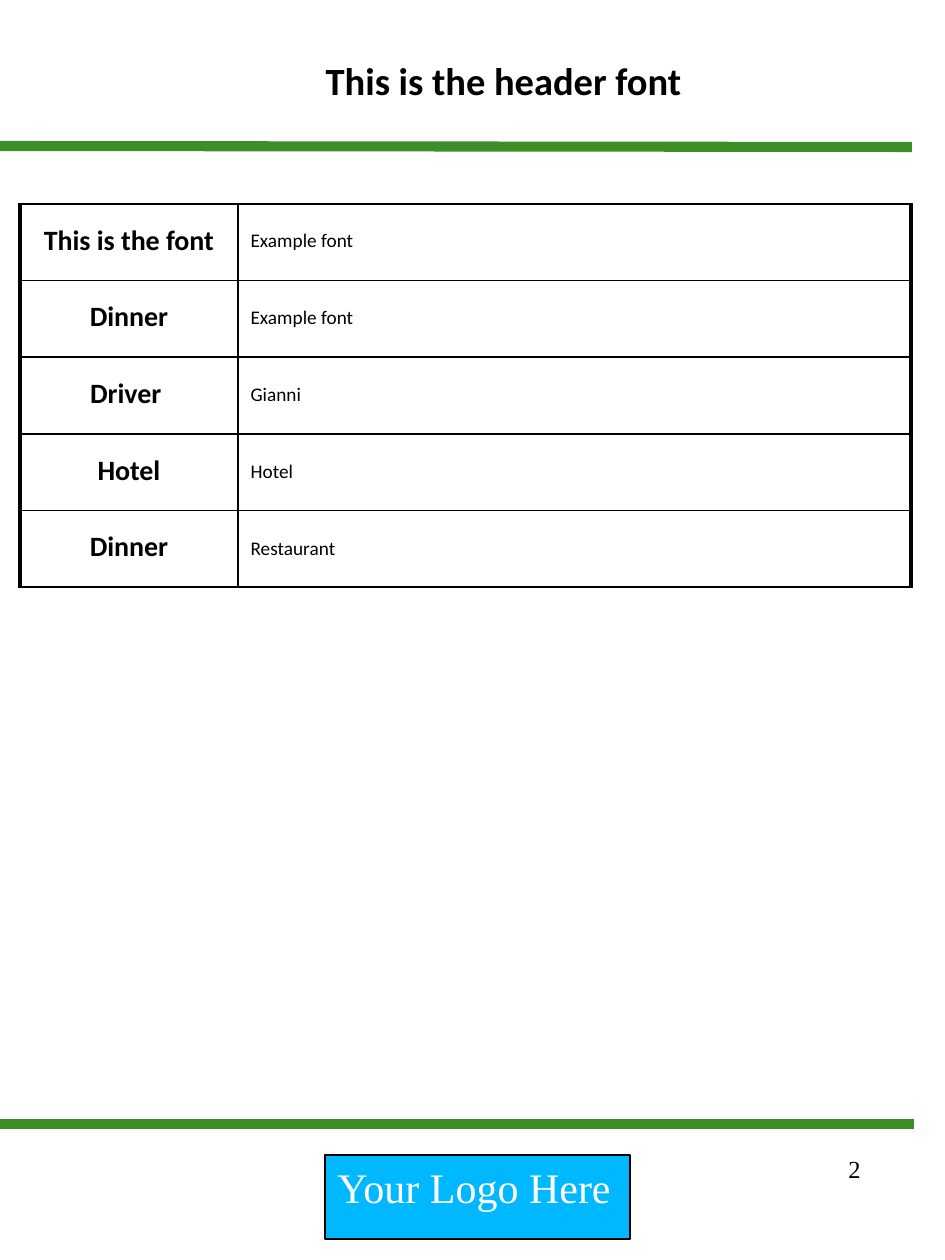
"""Build a one-page itinerary slide with a titled table and a logo box."""
import pptx
import pptx.dml.color
import pptx.enum.shapes
import pptx.enum.text
import pptx.oxml
import pptx.oxml.ns
import pptx.util

ALIGN = pptx.enum.text.PP_ALIGN
ANCHOR = pptx.enum.text.MSO_ANCHOR
EMU_PER_PX = 914400 / 126
BLACK, WHITE, GREEN, BLUE = "000000", "FFFFFF", "3C8E26", "00B8FF"
SANS, SERIF = "Calibri", "Times New Roman"

HEADER = "This is the header font"
ITINERARY = [
    ("This is the font", "Example font", True),
    ("Dinner", "Example font", True),
    ("Driver ", "Gianni", True),
    ("Hotel", "Hotel", False),
    ("Dinner", "Restaurant", False),
]
RULES = [(0, 1124, 914, 1124), (-1, 146, 912, 147)]
TABLE_BOX = (20, 204, 891, 383)
COLUMN_WIDTHS = (218, 673)


def px(length):
    return round(length * EMU_PER_PX)


def box(*lengths):
    return [px(length) for length in lengths]


def color(value):
    return pptx.dml.color.RGBColor.from_string(value)


def write(frame, text, size, font, ink=BLACK, bold=False, align=ALIGN.LEFT, anchor=ANCHOR.TOP):
    frame.word_wrap = True
    frame.vertical_anchor = anchor
    paragraph = frame.paragraphs[0]
    paragraph.alignment = align
    run = paragraph.add_run()
    run.text = text
    run.font.size = pptx.util.Pt(size)
    run.font.name = font
    run.font.bold = bold
    run.font.color.rgb = color(ink)
    return paragraph


def add_rule(slide, ends):
    rule = slide.shapes.add_connector(pptx.enum.shapes.MSO_CONNECTOR.STRAIGHT, *box(*ends))
    rule.line.color.rgb = color(GREEN)
    rule.line.width = pptx.util.Pt(5.75)
    rule._element.spPr.append(pptx.oxml.parse_xml(f'<a:effectLst {pptx.oxml.ns.nsdecls("a")}/>'))


def add_borders(cell, **widths):
    properties = cell._tc.get_or_add_tcPr()
    for side, width in widths.items():
        properties.append(pptx.oxml.parse_xml(
            f'<a:ln{side} {pptx.oxml.ns.nsdecls("a")} w="{pptx.util.Pt(width)}">'
            f'<a:solidFill><a:srgbClr val="{BLACK}"/></a:solidFill></a:ln{side}>'))


def add_itinerary(slide):
    table = slide.shapes.add_table(len(ITINERARY), len(COLUMN_WIDTHS), *box(*TABLE_BOX)).table
    table.first_row = table.horz_banding = False
    for column, width in zip(table.columns, COLUMN_WIDTHS):
        column.width = px(width)
    for index, (label, detail, tight) in enumerate(ITINERARY):
        table.rows[index].height = px(TABLE_BOX[3] / len(ITINERARY))
        label_cell, detail_cell = table.rows[index].cells
        add_borders(label_cell, L=2.25, R=1, T=1, B=1)
        add_borders(detail_cell, L=1, R=2.25, T=1, B=1)
        for cell in (label_cell, detail_cell):
            cell.fill.background()
            cell.vertical_anchor = ANCHOR.MIDDLE
        label_line = write(label_cell.text_frame, label, 16, SANS, bold=True,
                           align=ALIGN.CENTER, anchor=ANCHOR.MIDDLE)
        detail_line = write(detail_cell.text_frame, detail, 11, SANS, anchor=ANCHOR.MIDDLE)
        label_line.line_spacing = 0.78
        label_line.space_before = pptx.util.Pt(4.5)
        if tight:
            detail_line.line_spacing = 0.78
            detail_line.space_before = pptx.util.Pt(4)


def main():
    deck = pptx.Presentation()
    deck.slide_width, deck.slide_height = box(945, 1260)
    slide = deck.slides.add_slide(deck.slide_layouts[5])
    for ends in RULES:
        add_rule(slide, ends)

    title = slide.shapes.title
    title.left, title.top, title.width, title.height = box(199, 45, 609, 71)
    write(title.text_frame, HEADER, 22, SANS, bold=True, align=ALIGN.CENTER, anchor=ANCHOR.MIDDLE)

    add_itinerary(slide)

    page_number = slide.shapes.add_textbox(*box(678, 1148, 195, 83))
    write(page_number.text_frame, "2", 14, SERIF, align=ALIGN.RIGHT)

    logo = slide.shapes.add_shape(pptx.enum.shapes.MSO_SHAPE.RECTANGLE, *box(325, 1155, 305, 84))
    logo.shadow.inherit = False
    logo.fill.solid()
    logo.fill.fore_color.rgb = color(BLUE)
    logo.line.color.rgb = color(BLACK)
    logo.line.width = pptx.util.Pt(0.75)
    write(logo.text_frame, "Your Logo Here", 24, SERIF, ink=WHITE)

    deck.save("out.pptx")


if __name__ == "__main__":
    main()
